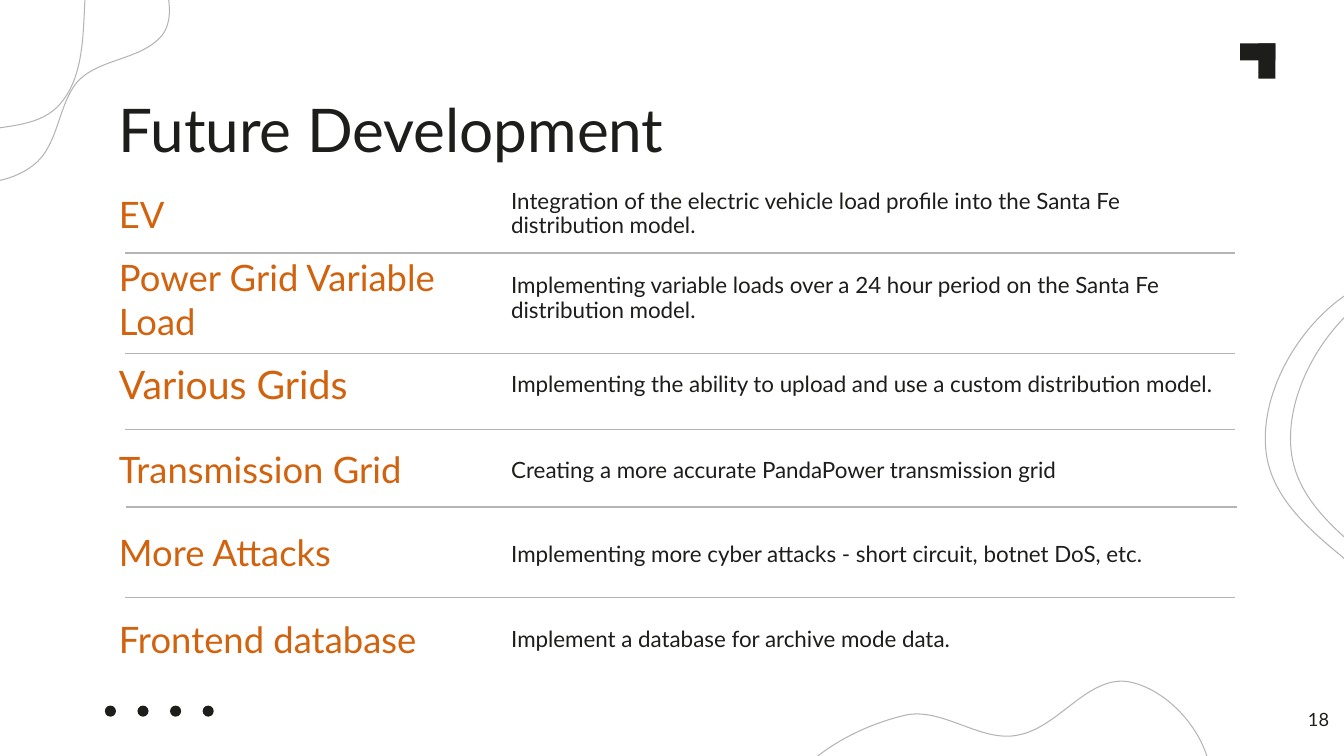
from dataclasses import dataclass

from lxml.etree import SubElement
from pptx import Presentation
from pptx.dml.color import RGBColor
from pptx.enum.shapes import MSO_CONNECTOR, MSO_SHAPE
from pptx.enum.text import MSO_ANCHOR, PP_ALIGN
from pptx.oxml.ns import qn
from pptx.util import Inches, Pt


@dataclass(frozen=True)
class Theme:
    font: str = "Lato"
    dark: RGBColor = RGBColor(0x1D, 0x1D, 0x1B)
    accent: RGBColor = RGBColor(0xD1, 0x63, 0x0F)
    line: RGBColor = RGBColor(0xB4, 0xB4, 0xB4)
    line_width: float = 0.75
    title: int = 43
    label: int = 26
    large_label: int = 28
    body: int = 16
    number: int = 13


theme = Theme()
presentation = Presentation()
presentation.slide_width = Inches(13.33)
presentation.slide_height = Inches(7.5)
slide = presentation.slides.add_slide(presentation.slide_layouts[6])


def add_text(text, left, top, width, height, size, color, inset=0.13, anchor=MSO_ANCHOR.MIDDLE):
    frame = slide.shapes.add_textbox(
        Inches(left), Inches(top), Inches(width), Inches(height)
    ).text_frame
    frame.text = text
    frame.word_wrap = True
    frame.vertical_anchor = anchor
    frame.margin_left = frame.margin_right = Inches(inset)
    frame.margin_top = frame.margin_bottom = Inches(inset)
    paragraph = frame.paragraphs[0]
    font = paragraph.runs[0].font
    font.name = theme.font
    font.size = Pt(size)
    font.color.rgb = color
    return paragraph


def add_solid(kind, left, top, width, height, rotation=0):
    shape = slide.shapes.add_shape(
        kind, Inches(left), Inches(top), Inches(width), Inches(height)
    )
    shape.rotation = rotation
    shape.shadow.inherit = False
    shape.fill.solid()
    shape.fill.fore_color.rgb = theme.dark
    shape.line.fill.background()


add_solid(MSO_SHAPE.RECTANGLE, 12.48, 0.43, 0.17, 0.35)
add_solid(MSO_SHAPE.RECTANGLE, 12.39, 0.34, 0.17, 0.35, 270)
for index in range(4):
    add_solid(MSO_SHAPE.OVAL, 1.04 + index * 0.97 / 3, 7, 0.11, 0.11)

right_curve = [
    (13.99, 2.74), (13.29, 2.93), (12.68, 3.85), (12.82, 4.56),
    (12.94, 5.15), (13.6, 5.5), (14.03, 5.93),
]
curves = [
    ((-0.54, -0.35, 2.22, 2.17),
     [(-0.54, 1.76), (-0.26, 1.86), (0.1, 1.82), (0.33, 1.64),
      (0.58, 1.45), (0.57, 1.06), (0.76, 0.82),
      (0.97, 0.58), (1.39, 0.6), (1.6, 0.36),
      (1.75, 0.18), (1.66, -0.12), (1.58, -0.35)]),
    ((-0.88, -0.24, 1.74, 2.14),
     [(0.86, -0.24), (0.81, 0.2), (0.88, 0.74), (0.57, 1.06),
      (0.35, 1.28), (-0.02, 1.24), (-0.32, 1.33),
      (-0.57, 1.42), (-0.76, 1.67), (-0.88, 1.9)]),
    ((12.8, 2.74, 1.23, 3.19), right_curve),
    ((12.55, 2.74, 1.23, 3.19), [(x - 0.25, y) for x, y in right_curve]),
    ((7.78, 6.76, 4.24, 1.08),
     [(7.78, 7.83), (8.06, 7.46), (8.51, 7.21), (8.96, 7.1),
      (9.34, 7), (9.73, 7.38), (10.11, 7.29),
      (10.5, 7.21), (10.78, 6.72), (11.17, 6.76),
      (11.59, 6.82), (12.01, 7.31), (12.01, 7.74)]),
]
for (left, top, width, height), points in curves:
    builder = slide.shapes.build_freeform(Inches(left), Inches(top))
    builder.add_line_segments([(Inches(left + width), Inches(top + height))], close=False)
    shape = builder.convert_to_shape()
    shape.shadow.inherit = False
    shape.fill.background()
    shape.line.color.rgb = theme.line
    shape.line.width = Pt(theme.line_width)
    outline = next(shape.element.iter(qn("a:path")))
    for command in list(outline):
        outline.remove(command)
    for index, (x, y) in enumerate(points):
        if index == 0:
            command = SubElement(outline, qn("a:moveTo"))
        elif index % 3 == 1:
            command = SubElement(outline, qn("a:cubicBezTo"))
        point = SubElement(command, qn("a:pt"))
        point.set("x", str(Inches(x - left)))
        point.set("y", str(Inches(y - top)))

page_number = add_text(
    "18", 12.48, 6.93, 0.8, 0.57, theme.number, theme.dark, 0.1, MSO_ANCHOR.TOP
)
page_number.alignment = PP_ALIGN.RIGHT
add_text(
    "Future Development", 1.05, 0.79, 11.23, 0.83, theme.title, theme.dark, anchor=MSO_ANCHOR.TOP
)

developments = [
    ("EV", 1.76, theme.label, 1.76,
     "Integration of the electric vehicle load profile into the Santa Fe distribution model."),
    ("Power Grid Variable Load", 2.6, theme.label, 2.6,
     "Implementing variable loads over a 24 hour period on the Santa Fe distribution model."),
    ("Various Grids", 3.44, theme.large_label, 3.44,
     "Implementing the ability to upload and use a custom distribution model."),
    ("Transmission Grid", 4.29, theme.label, 4.29,
     "Creating a more accurate PandaPower transmission grid"),
    ("More Attacks", 5.11, theme.label, 5.13,
     "Implementing more cyber attacks - short circuit, botnet DoS, etc."),
    ("Frontend database", 5.97, theme.label, 5.97,
     "Implement a database for archive mode data."),
]
for index, (label, label_top, label_size, top, description) in enumerate(developments):
    add_text(label, 1.05, label_top, 3.89, 0.73, label_size, theme.accent)
    width = 7.34 if index < 2 else 7.35
    paragraph = add_text(description, 4.94, top, width, 0.73, theme.body, theme.dark)
    if index < 2:
        paragraph.line_spacing = 0.9
        paragraph.space_before = Pt(10)

dividers = [
    (1.24, 12.25, 2.51), (1.24, 12.25, 3.51), (1.24, 12.25, 4.26),
    (1.25, 12.27, 5.03), (1.24, 12.25, 5.93),
]
for left, right, y in dividers:
    divider = slide.shapes.add_connector(
        MSO_CONNECTOR.STRAIGHT, Inches(left), Inches(y), Inches(right), Inches(y)
    )
    divider.line.color.rgb = theme.line
    divider.line.width = Pt(theme.line_width)
    SubElement(divider.element.spPr, qn("a:effectLst"))

presentation.save("out.pptx")
